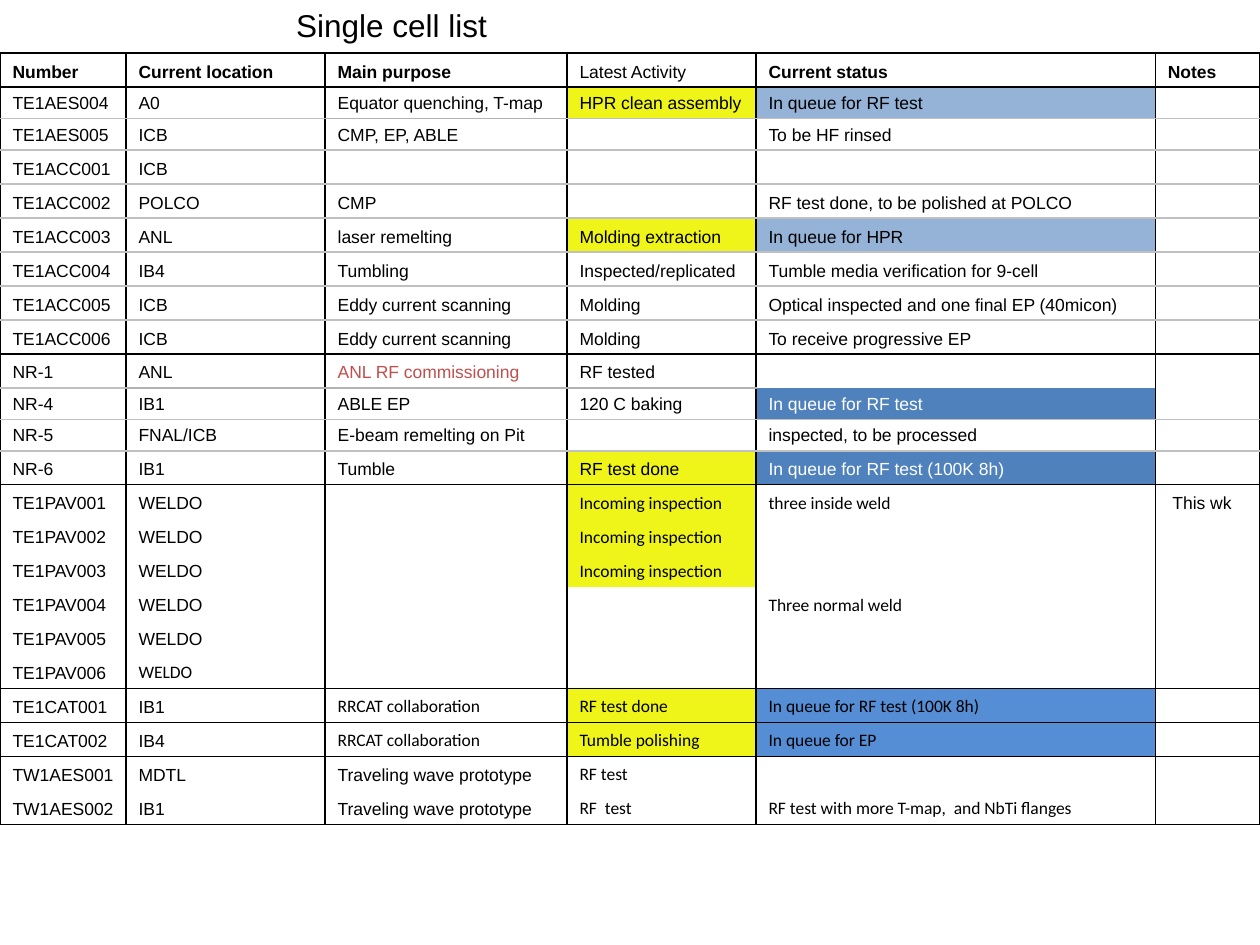
import pptx
import pptx.util
from lxml import etree
from pptx.dml.color import RGBColor
from pptx.enum.text import MSO_ANCHOR, PP_ALIGN
from pptx.oxml.ns import qn
from pptx.util import Inches, Pt

BLACK = RGBColor(0x00, 0x00, 0x00)
WHITE = RGBColor(0xFF, 0xFF, 0xFF)
RED = RGBColor(0xC0, 0x50, 0x4D)
YELLOW = RGBColor(0xF0, 0xF5, 0x19)
PALE = RGBColor(0x95, 0xB3, 0xD7)
BLUE = RGBColor(0x4F, 0x81, 0xBD)
SKY = RGBColor(0x55, 0x8E, 0xD5)
SILVER = RGBColor(0xC0, 0xC0, 0xC0)
GREY = RGBColor(0xB2, 0xB2, 0xB2)

CELLS = [
    ("Number", "Current location", "Main purpose", "Latest Activity", "Current status", "Notes"),
    ("TE1AES004", "A0", "Equator quenching, T-map", "HPR clean assembly", "In queue for RF test", ""),
    ("TE1AES005", "ICB", "CMP, EP, ABLE", "", "To be HF rinsed", ""),
    ("TE1ACC001", "ICB", "", "", "", ""),
    ("TE1ACC002", "POLCO", "CMP", "", "RF test done, to be polished at POLCO", ""),
    ("TE1ACC003", "ANL", "laser remelting", "Molding extraction", "In queue for HPR", ""),
    ("TE1ACC004", "IB4", "Tumbling", "Inspected/replicated", "Tumble media verification for 9-cell", ""),
    ("TE1ACC005", "ICB", "Eddy current scanning", "Molding",
     "Optical inspected and one final EP (40micon)", ""),
    ("TE1ACC006", "ICB", "Eddy current scanning", "Molding", "To receive progressive EP", ""),
    ("NR-1", "ANL", "ANL RF commissioning", "RF tested", "", ""),
    ("NR-4", "IB1", "ABLE EP", "120 C baking", "In queue for RF test", ""),
    ("NR-5", "FNAL/ICB", "E-beam remelting on Pit", "", "inspected, to be processed", ""),
    ("NR-6", "IB1", "Tumble", "RF test done", "In queue for RF test (100K 8h)", ""),
    ("TE1PAV001", "WELDO", "", "Incoming inspection", "three inside weld", " This wk"),
    ("TE1PAV002", "WELDO", "", "Incoming inspection", "", ""),
    ("TE1PAV003", "WELDO", "", "Incoming inspection", "", ""),
    ("TE1PAV004", "WELDO", "", "", "Three normal weld", ""),
    ("TE1PAV005", "WELDO", "", "", "", ""),
    ("TE1PAV006", "WELDO", "", "", "", ""),
    ("TE1CAT001", "IB1", "RRCAT collaboration", "RF test done", "In queue for RF test (100K 8h)", ""),
    ("TE1CAT002", "IB4", "RRCAT collaboration", "Tumble polishing", "In queue for EP", ""),
    ("TW1AES001", "MDTL", "Traveling wave prototype", "RF test", "", ""),
    ("TW1AES002", "IB1", "Traveling wave prototype", "RF  test",
     "RF test with more T-map,  and NbTi flanges", ""),
]
WIDTHS = [1, 1.58, 1.92, 1.5, 3.17, 0.83]
LOW_ROWS = {1, 2, 10, 11}
ACTIVE, STATUS = 3, 4
FILLS = {(row, ACTIVE): YELLOW for row in (1, 5, 12, 13, 14, 15, 19, 20)}
FILLS |= {(1, STATUS): PALE, (5, STATUS): PALE, (10, STATUS): BLUE,
          (12, STATUS): BLUE, (19, STATUS): SKY, (20, STATUS): SKY}
INKS = {(9, 2): RED, (10, STATUS): WHITE, (12, STATUS): WHITE}
CALIBRI = {(row, col) for row in range(13, 23) for col in (ACTIVE, STATUS)}
CALIBRI |= {(18, 1), (19, 2), (20, 2)}

# Rules are numbered by the row below them.
GROUPS = {0, 1, 9, 13, 19, 20, 21, 23}
OPEN = {14, 15, 16, 17, 18, 22}
RULES = {(2, 2): GREY, (10, 1): GREY, (10, 2): GREY, (10, 3): GREY,
         (10, 4): None, (10, 5): None}


def rule(row, col):
    """Colour of the rule above a cell, or None where there is none."""
    if row in GROUPS:
        return BLACK
    if row in OPEN:
        return None
    return RULES.get((row, col), SILVER)


def border(cell, side, color):
    props = cell._tc.get_or_add_tcPr()
    line = etree.SubElement(props, qn("a:ln" + side), w=str(Pt(1)))
    if color is None:
        etree.SubElement(line, qn("a:noFill"))
    else:
        fill = etree.SubElement(line, qn("a:solidFill"))
        etree.SubElement(fill, qn("a:srgbClr"), val=str(color))


def fill_cell(cell, row, col):
    for side, color in (("L", BLACK), ("R", BLACK),
                        ("T", rule(row, col)), ("B", rule(row + 1, col))):
        border(cell, side, color)
    if (row, col) in FILLS:
        cell.fill.solid()
        cell.fill.fore_color.rgb = FILLS[row, col]
    else:
        cell.fill.background()
    cell.margin_top = cell.margin_bottom = Inches(0.04)
    cell.vertical_anchor = MSO_ANCHOR.BOTTOM
    cell.text = CELLS[row][col]
    para = cell.text_frame.paragraphs[0]
    font = para.font
    font.size = Pt(10)
    font.name = "Calibri" if (row, col) in CALIBRI else "Arial"
    font.bold = row == 0 and col != ACTIVE
    font.color.rgb = INKS.get((row, col), BLACK)
    if not cell.text:
        # An empty cell takes its height from the end mark.
        etree.SubElement(para._p, qn("a:endParaRPr"), sz="1000")


def add_list(slide, left, top):
    high = [0.25 if row in LOW_ROWS else 0.27 for row in range(len(CELLS))]
    table = slide.shapes.add_table(
        len(CELLS), len(WIDTHS), left, top,
        Inches(sum(WIDTHS)), Inches(sum(high))).table
    table.first_row = table.horz_banding = False
    for column, width in zip(table.columns, WIDTHS):
        column.width = Inches(width)
    for row, height in enumerate(high):
        table.rows[row].height = Inches(height)
        for col in range(len(WIDTHS)):
            fill_cell(table.cell(row, col), row, col)


def set_title(slide, left, top, width, height):
    title = slide.shapes.title
    title.left, title.top, title.width, title.height = left, top, width, height
    frame = title.text_frame
    frame.text = "Single cell list"
    frame.vertical_anchor = MSO_ANCHOR.MIDDLE
    para = frame.paragraphs[0]
    para.alignment = PP_ALIGN.LEFT
    para.font.size = Pt(18)
    para.font.name = "Arial"
    para.font.color.rgb = BLACK


def main():
    deck = pptx.Presentation()
    deck.slide_width, deck.slide_height = Inches(10), Inches(7.5)
    slide = deck.slides.add_slide(deck.slide_layouts[5])
    set_title(slide, Inches(2.25), Inches(0), Inches(5.42), Inches(0.4))
    add_list(slide, Inches(0), Inches(0.42))
    deck.save("out.pptx")


if __name__ == "__main__":
    main()
